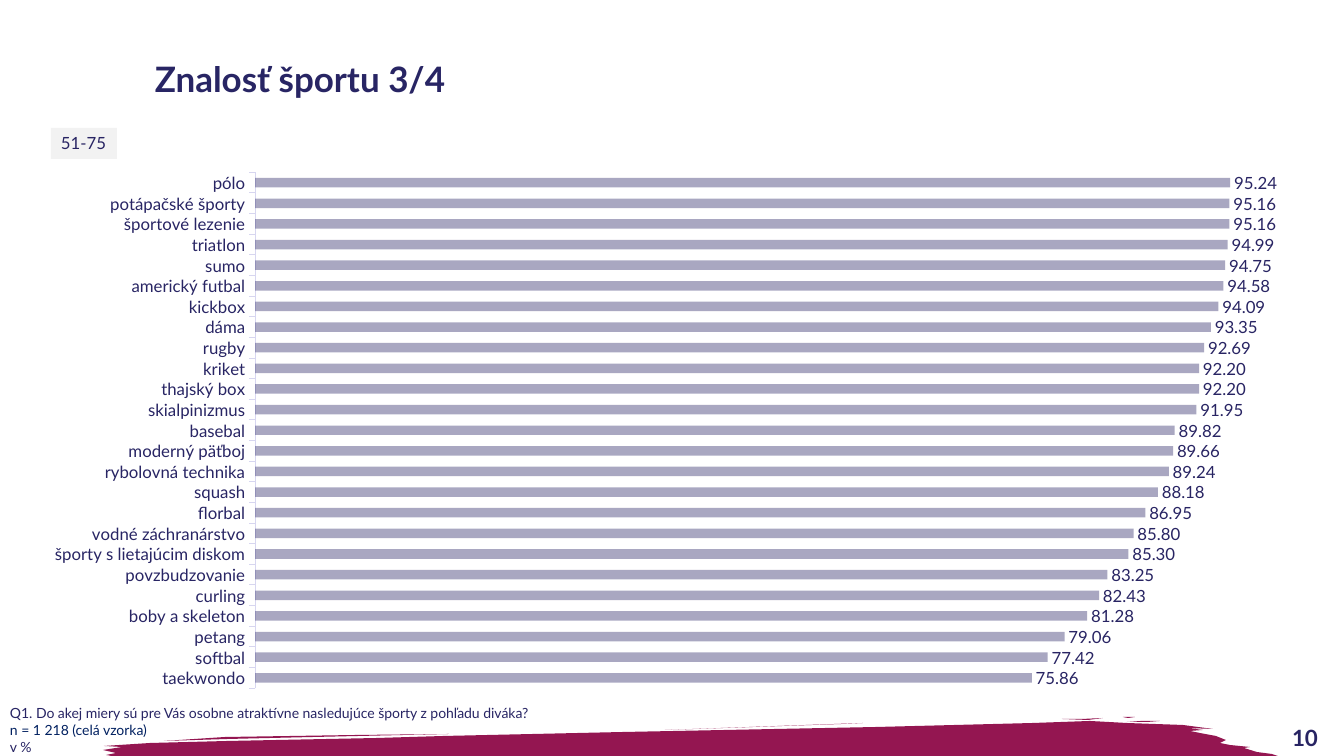
import lxml.etree
import pptx
import pptx.chart.data
import pptx.dml.color
import pptx.enum.chart
import pptx.enum.shapes
import pptx.enum.text
import pptx.oxml
import pptx.oxml.ns
import pptx.util

RGBColor = pptx.dml.color.RGBColor
INDIGO = RGBColor(0x28, 0x25, 0x64)
DEEP_INDIGO = RGBColor(0x28, 0x24, 0x63)
NAVY = RGBColor(0x00, 0x20, 0x60)
LAVENDER = RGBColor(0xD7, 0xD6, 0xF0)
LIGHT_GREY = RGBColor(0xF2, 0xF2, 0xF2)
BURGUNDY = RGBColor(0x94, 0x16, 0x51)

FONT = "Lato"
EMU_PER_PX = 914400 / 100.8

SPORTS = [
    ("pólo", 95.24), ("potápačské športy", 95.16), ("športové lezenie", 95.16),
    ("triatlon", 94.99), ("sumo", 94.75), ("americký futbal", 94.58),
    ("kickbox", 94.09), ("dáma", 93.35), ("rugby", 92.69), ("kriket", 92.20),
    ("thajský box", 92.20), ("skialpinizmus", 91.95), ("basebal", 89.82),
    ("moderný päťboj", 89.66), ("rybolovná technika", 89.24), ("squash", 88.18),
    ("florbal", 86.95), ("vodné záchranárstvo", 85.80),
    ("športy s lietajúcim diskom", 85.30), ("povzbudzovanie", 83.25),
    ("curling", 82.43), ("boby a skeleton", 81.28), ("petang", 79.06),
    ("softbal", 77.42), ("taekwondo", 75.86),
]

BRUSH_STROKES = [
    [(112, 756), (106, 755), (116, 753), (103, 750), (122, 747), (104, 746),
     (150, 743), (228, 741), (377, 738), (444, 736), (623, 732), (876, 727),
     (1033, 723), (1090, 721), (1127, 723), (1183, 725), (1213, 729),
     (1188, 728), (1203, 730), (1190, 731), (1200, 733), (1216, 736),
     (1226, 740), (1220, 743), (1230, 745), (1250, 747), (1244, 748),
     (1257, 752), (1272, 754), (1278, 756)],
    [(164, 741), (225, 737), (357, 735), (449, 734), (313, 737), (228, 739)],
    [(665, 730), (842, 724), (863, 723)],
    [(1062, 719), (1082, 719), (1103, 718), (1088, 720)],
    [(1123, 717), (1135, 717), (1128, 718)],
    [(1127, 722), (1141, 721), (1160, 721), (1147, 722)],
]


def px(length):
    return pptx.util.Emu(round(length * EMU_PER_PX))


def style_font(font, size=12, color=INDIGO, bold=False):
    font.name = FONT
    font.size = pptx.util.Pt(size)
    font.bold = bold
    font.color.rgb = color


def write(paragraph, text, align=None, line_spacing=None, **font_format):
    paragraph.alignment = align
    paragraph.line_spacing = line_spacing
    run = paragraph.add_run()
    run.text = text
    style_font(run.font, **font_format)


class SportSlide:
    def __init__(self, presentation):
        self.slide = presentation.slides.add_slide(presentation.slide_layouts[6])

    def text(self, box, lines, anchor=pptx.enum.text.MSO_ANCHOR.TOP, wrap=True):
        shape = self.slide.shapes.add_textbox(*map(px, box))
        self.fill_frame(shape.text_frame, lines, anchor, wrap)

    def fill_frame(self, frame, lines, anchor, wrap):
        frame.word_wrap = wrap
        if not wrap:
            frame.auto_size = pptx.enum.text.MSO_AUTO_SIZE.SHAPE_TO_FIT_TEXT
        frame.vertical_anchor = anchor
        for index, (text, text_format) in enumerate(lines):
            paragraph = frame.add_paragraph() if index else frame.paragraphs[0]
            write(paragraph, text, **text_format)

    def tag(self, box, text, fill, **text_format):
        shape = self.slide.shapes.add_shape(
            pptx.enum.shapes.MSO_SHAPE.RECTANGLE, *map(px, box))
        self.paint(shape, fill)
        self.fill_frame(shape.text_frame, [(text, text_format)],
                        pptx.enum.text.MSO_ANCHOR.TOP, False)

    def brush(self, strokes, fill):
        builder = self.slide.shapes.build_freeform(*strokes[0][0], scale=EMU_PER_PX)
        for index, (start, *points) in enumerate(strokes):
            if index:
                builder.move_to(*start)
            builder.add_line_segments(points, close=True)
        self.paint(builder.convert_to_shape(), fill)

    def paint(self, shape, fill):
        shape.shadow.inherit = False
        shape.fill.solid()
        shape.fill.fore_color.rgb = fill
        shape.line.fill.background()

    def bar_chart(self, box, rows, plot_area):
        data = pptx.chart.data.CategoryChartData()
        data.categories = [name for name, value in rows]
        data.add_series("Series 1", [value for name, value in rows])
        chart = self.slide.shapes.add_chart(
            pptx.enum.chart.XL_CHART_TYPE.BAR_CLUSTERED, *map(px, box), data).chart
        chart.has_legend = False
        chart.has_title = False
        style_font(chart.font)

        sport_axis = chart.category_axis
        sport_axis.reverse_order = True
        sport_axis.has_major_gridlines = False
        sport_axis.major_tick_mark = pptx.enum.chart.XL_TICK_MARK.OUTSIDE
        sport_axis.format.line.color.rgb = LAVENDER
        sport_axis.format.line.width = pptx.util.Pt(0.75)
        style_font(sport_axis.tick_labels.font)

        percent_axis = chart.value_axis
        percent_axis.visible = False
        percent_axis.has_major_gridlines = False
        percent_axis.minimum_scale = 0
        percent_axis.maximum_scale = 100

        plot = chart.plots[0]
        plot.gap_width = 117
        plot.overlap = 100
        plot.vary_by_categories = False
        plot.has_data_labels = True
        labels = plot.data_labels
        labels.show_value = True
        labels.number_format = "#,##0.00"
        labels.number_format_is_linked = False
        labels.position = pptx.enum.chart.XL_LABEL_POSITION.OUTSIDE_END
        style_font(labels.font, color=DEEP_INDIGO)

        series = plot.series[0]
        series.format.fill.solid()
        series.format.fill.fore_color.rgb = INDIGO
        color = next(series.format.fill._xPr.iter(pptx.oxml.ns.qn("a:srgbClr")))
        lxml.etree.SubElement(color, pptx.oxml.ns.qn("a:alpha"), val="40000")
        self.place_plot(chart, plot_area)

    def place_plot(self, chart, plot_area):
        area = chart._chartSpace.chart.plotArea
        for layout in area.findall(pptx.oxml.ns.qn("c:layout")):
            area.remove(layout)
        settings = [("layoutTarget", "inner"), ("xMode", "edge"), ("yMode", "edge")]
        settings += zip("xywh", plot_area)
        children = "".join(f'<c:{name} val="{value}"/>' for name, value in settings)
        area.insert(0, pptx.oxml.parse_xml(
            f'<c:layout {pptx.oxml.ns.nsdecls("c")}>'
            f"<c:manualLayout>{children}</c:manualLayout></c:layout>"))


def main():
    presentation = pptx.Presentation()
    presentation.slide_width = px(1344)
    presentation.slide_height = px(756)
    middle = pptx.enum.text.MSO_ANCHOR.MIDDLE
    center = pptx.enum.text.PP_ALIGN.CENTER

    page = SportSlide(presentation)
    page.text((145, 28, 986, 106),
              [("Znalosť športu 3/4", dict(size=25, bold=True, line_spacing=0.9))],
              anchor=middle)
    page.text((1266, 720, 78, 36),
              [("10", dict(size=16, bold=True, color=DEEP_INDIGO, align=center))],
              anchor=middle)
    page.bar_chart((41, 166, 1275, 534), SPORTS, (0.168, 0.012, 0.803, 0.966))
    page.brush(BRUSH_STROKES, BURGUNDY)
    page.text((0, 700, 540, 56), [
        ("Q1. Do akej miery sú pre Vás osobne atraktívne nasledujúce športy "
         "z pohľadu diváka?", dict(size=10)),
        ("n = 1 218 (celá vzorka)", dict(size=10, color=NAVY)),
        ("v %", dict(size=10)),
    ], wrap=False)
    page.tag((51, 128, 66, 31), "51-75", LIGHT_GREY, color=DEEP_INDIGO,
             align=pptx.enum.text.PP_ALIGN.LEFT)
    presentation.save("out.pptx")


if __name__ == "__main__":
    main()
